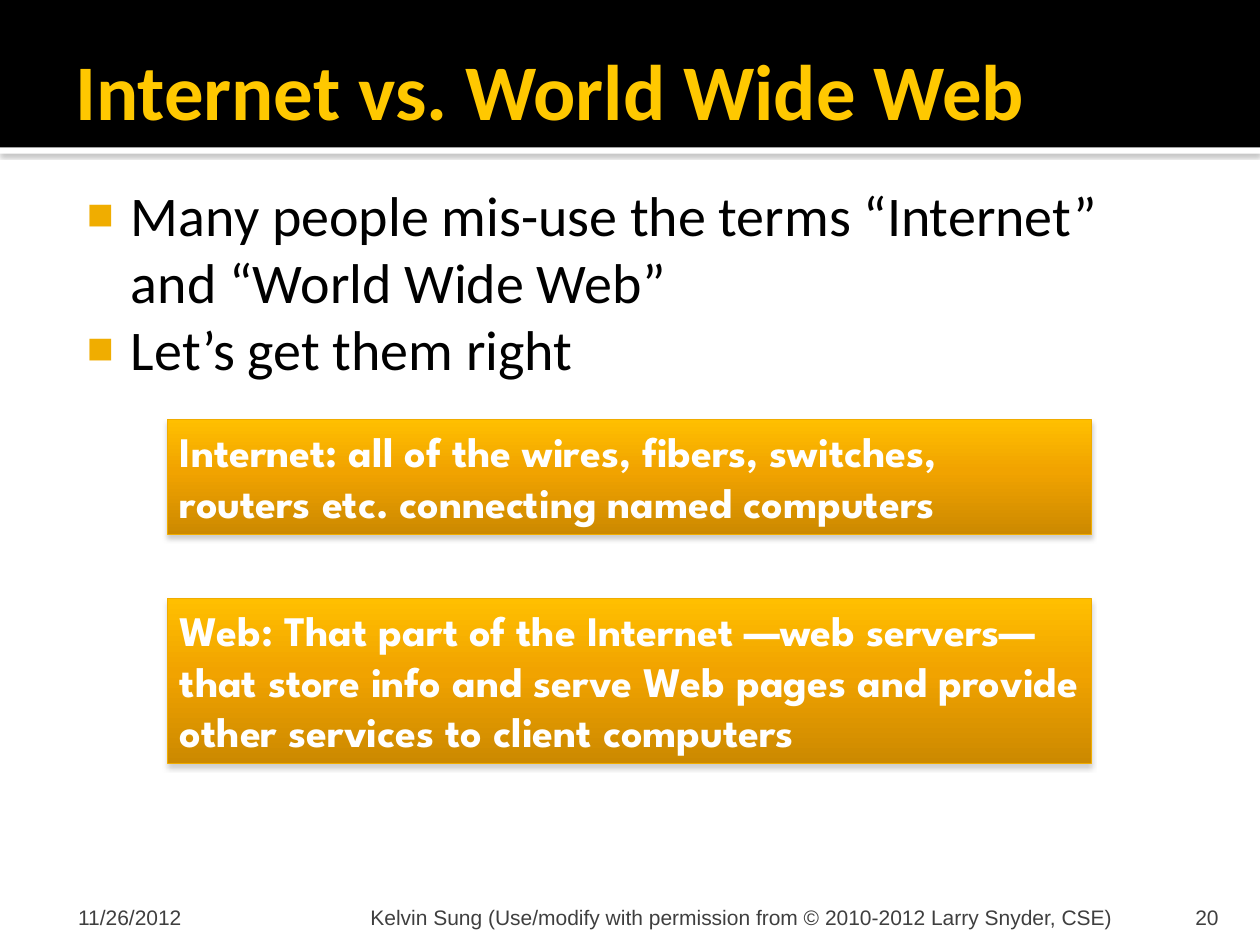
from lxml import etree
from pptx import Presentation
from pptx import util as u
from pptx.dml.color import RGBColor
from pptx.enum import shapes, text
from pptx.oxml import ns

COLORS = {
    "white": "FFFFFF", "black": "000000", "title": "FFC800", "bullet": "F0AD00",
    "border": "F0AC00", "footer": "3F3F3F", "shadow": "808080",
}
GOLD_STOPS = [(0, "FFBF00"), (45, "F1A300"), (100, "CC8900")]


def add_xml(parent, tag, **attributes):
    child = etree.SubElement(parent, ns.qn(tag))
    for name, value in attributes.items():
        child.set(name, str(value))
    return child


class SlideBuilder:
    def __init__(self, slide):
        self.slide = slide

    def fill_text(self, frame, paragraphs, size, font, color, bold=False,
                  insets=(0.1, 0.05, 0.1, 0.05), anchor=text.MSO_ANCHOR.TOP,
                  align=text.PP_ALIGN.LEFT):
        frame.word_wrap = True
        frame.vertical_anchor = anchor
        (frame.margin_left, frame.margin_top,
         frame.margin_right, frame.margin_bottom) = map(u.Inches, insets)
        frame.text = "\n".join(paragraphs)
        for paragraph in frame.paragraphs:
            paragraph.alignment = align
            for run in paragraph.runs:
                run.font.size = u.Pt(size)
                run.font.name = font
                run.font.bold = bold
                run.font.color.rgb = RGBColor.from_string(COLORS[color])

    def label(self, box, paragraphs, **style):
        frame = self.slide.shapes.add_textbox(*map(u.Inches, box)).text_frame
        self.fill_text(frame, paragraphs, **style)
        return frame

    def bullets(self, box, paragraphs, **style):
        for paragraph in self.label(box, paragraphs, **style).paragraphs:
            props = paragraph._p.get_or_add_pPr()
            props.set("marL", str(u.Inches(0.48)))
            props.set("indent", str(u.Inches(-0.35)))
            add_xml(add_xml(props, "a:buClr"), "a:srgbClr", val=COLORS["bullet"])
            add_xml(props, "a:buSzPct", val=80000)
            add_xml(props, "a:buFont", typeface="Arial")
            add_xml(props, "a:buChar", char="■")

    def rectangle(self, box):
        rect = self.slide.shapes.add_shape(
            shapes.MSO_SHAPE.RECTANGLE, *map(u.Inches, box))
        rect.shadow.inherit = False
        return rect

    def band(self, box, color):
        band = self.rectangle(box)
        band.fill.solid()
        band.fill.fore_color.rgb = RGBColor.from_string(COLORS[color])
        band.line.fill.background()
        return band

    def shade(self, shape, opacity, blur, distance):
        effects = shape._element.spPr.find(ns.qn("a:effectLst"))
        shadow = add_xml(effects, "a:outerShdw", blurRad=u.Pt(blur),
                         dist=u.Pt(distance), dir=5400000, rotWithShape=0)
        color = add_xml(shadow, "a:srgbClr", val=COLORS["shadow"])
        add_xml(color, "a:alpha", val=opacity * 1000)

    def definition(self, top, height, wording):
        card = self.rectangle((1.33, top, 7.33, height))
        card.line.color.rgb = RGBColor.from_string(COLORS["border"])
        card.line.width = u.Pt(0.5)
        # Three-stop vertical gradient
        card.fill.gradient()
        gradient = card._element.spPr.find(ns.qn("a:gradFill"))
        for child in list(gradient):
            gradient.remove(child)
        stops = add_xml(gradient, "a:gsLst")
        for position, color in GOLD_STOPS:
            stop = add_xml(stops, "a:gs", pos=position * 1000)
            add_xml(stop, "a:srgbClr", val=color)
        add_xml(gradient, "a:lin", ang=5400000, scaled=0)
        self.shade(card, 38, 3.1, 2)
        self.fill_text(card.text_frame, [wording], size=24,
                       font="League Spartan", color="white", bold=True)

    def footer(self, left, width, wording, insets, align=text.PP_ALIGN.LEFT):
        self.label((left, 7.08, width, 0.3), [wording], size=12, font="Arial",
                   color="footer", insets=insets, align=align,
                   anchor=text.MSO_ANCHOR.BOTTOM)


def main():
    deck = Presentation()
    deck.slide_width, deck.slide_height = u.Inches(10), u.Inches(7.5)
    builder = SlideBuilder(deck.slides.add_slide(deck.slide_layouts[6]))

    # Header
    divider = builder.band((0, 1.17, 10, 0.05), "white")
    builder.shade(divider, 60, 2.5, 0.8)
    builder.band((0, 0, 10, 1.17), "black")
    builder.label((0.5, 0.17, 9, 1.08), ["Internet vs. World Wide Web"],
                  size=45, font="Calibri", color="title", bold=True,
                  insets=(0.1, 0.05, 0.05, 0.05), anchor=text.MSO_ANCHOR.MIDDLE)

    # Key points
    builder.bullets((0.5, 1.33, 9, 5.67), [
        "Many people mis-use the terms “Internet” and “World Wide Web”",
        "Let’s get them right",
    ], size=32, font="Calibri", color="black", insets=(0.06, 0.1, 0.1, 0.05))

    # Definitions
    builder.definition(3.33, 0.91, "Internet: all of the wires, fibers, switches, "
                       "routers etc. connecting named computers")
    builder.definition(4.75, 1.31, "Web: That part of the Internet —web servers—that "
                       "store info and serve Web pages and provide other services "
                       "to client computers")

    # Footer
    builder.footer(0.5, 2.33, "11/26/2012", (0.12, 0.05, 0.05, 0))
    builder.footer(8.97, 0.8, "20", (0.1, 0.05, 0.1, 0), text.PP_ALIGN.RIGHT)
    builder.footer(2.89, 6.02, "Kelvin Sung (Use/modify with permission from "
                   "© 2010-2012 Larry Snyder, CSE)", (0.05, 0.05, 0.05, 0))

    deck.save("out.pptx")


if __name__ == "__main__":
    main()
